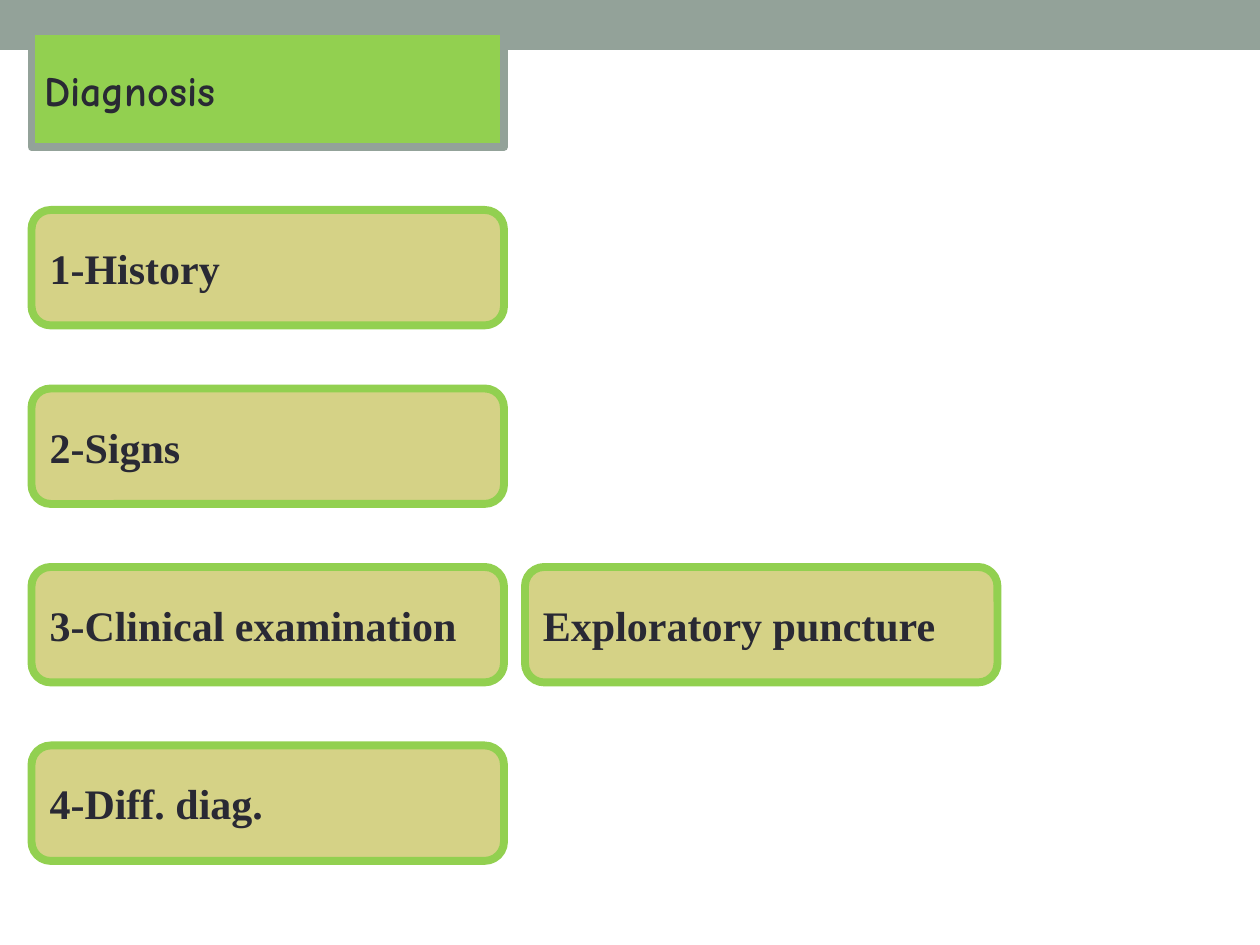
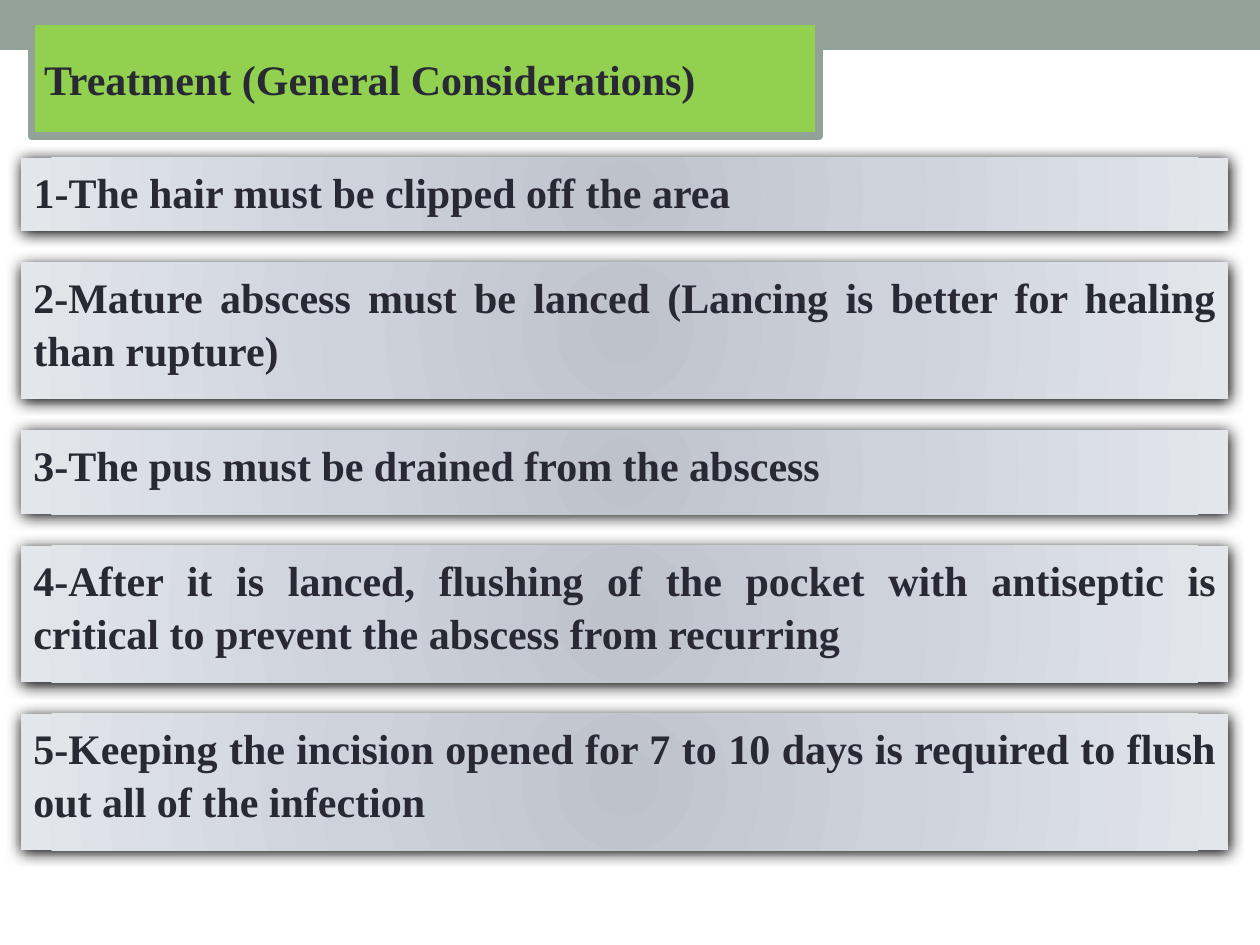
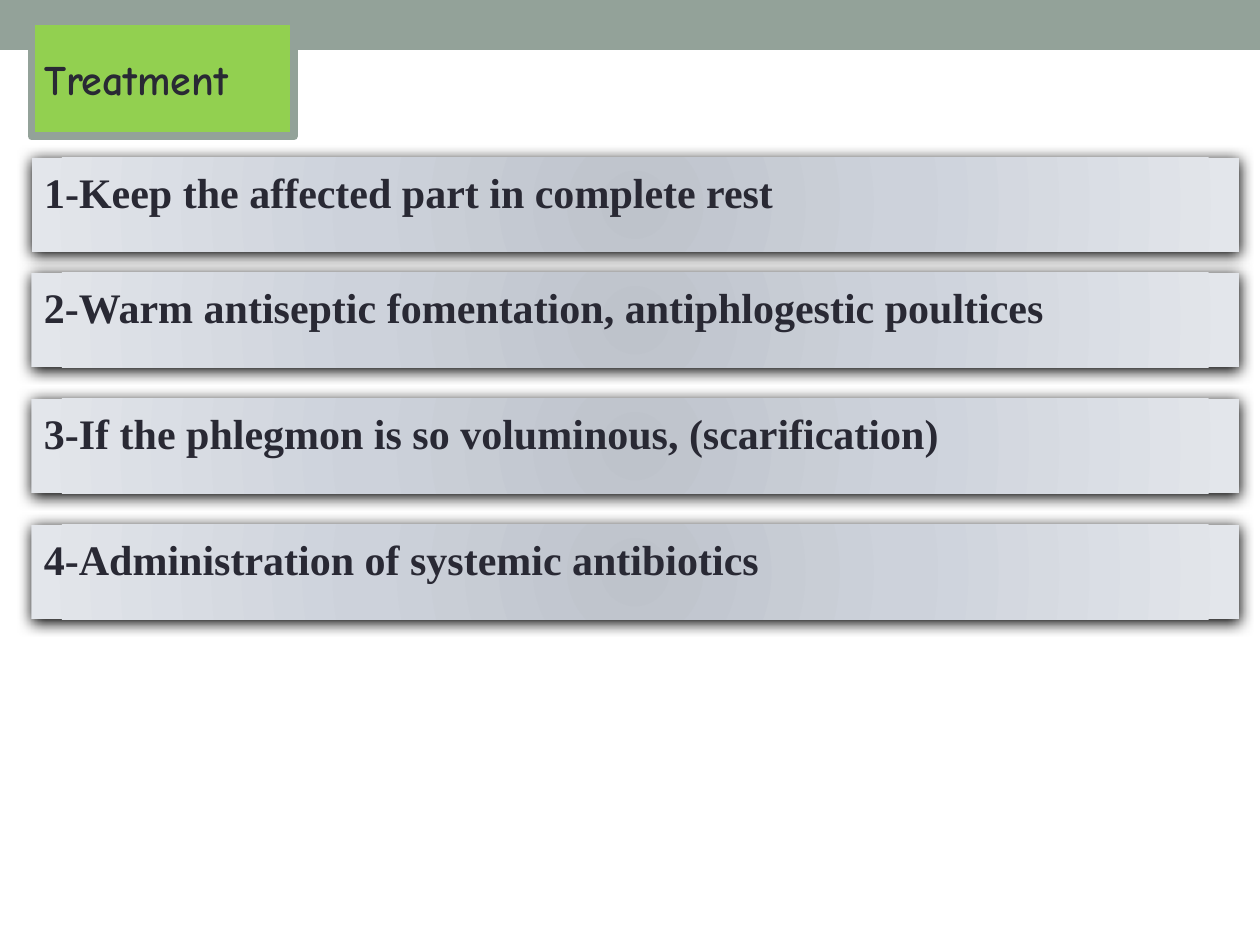
from lxml.etree import SubElement
from pptx import Presentation
from pptx.dml.color import RGBColor
from pptx.enum.shapes import MSO_SHAPE
from pptx.enum.text import MSO_ANCHOR, MSO_AUTO_SIZE, PP_ALIGN
from pptx.oxml import parse_xml
from pptx.oxml.ns import nsdecls, qn
from pptx.util import Emu, Pt

PX = 9525
SLIDE_WIDTH, SLIDE_HEIGHT, BAND_HEIGHT = 960, 720, 38
BOX_LEFT, BOX_WIDTH, BOX_HEIGHT = 24, 360, 88
BOX_PITCH = 136
PANEL_WIDTH = 920

SAGE = RGBColor(0x93, 0xA2, 0x99)
GREEN = RGBColor(0x92, 0xD0, 0x50)
KHAKI = RGBColor(0xD5, 0xD2, 0x86)
INK = RGBColor(0x29, 0x29, 0x34)
PANEL_STOPS = (
    (0, RGBColor(0xBE, 0xC3, 0xCB)),
    (45, RGBColor(0xCD, 0xD2, 0xDB)),
    (100, RGBColor(0xE3, 0xE6, 0xEB)),
)
SHADOW_COLOR = RGBColor(0, 0, 0)

SERIF, COMIC = "Times New Roman", "Comic Neue"
TITLE_LAYOUT, LIST_LAYOUT = 5, 1

STEPS = ["1-History", "2-Signs", "3-Clinical examination", "4-Diff. diag."]

# Each panel: text, top, height
CONSIDERATIONS = [
    ("1-The hair must be clipped off the area", 120, 56),
    ("2-Mature abscess must be lanced (Lancing is better for healing than rupture)", 200, 104),
    ("3-The pus must be drained from the abscess", 328, 64),
    ("4-After it is lanced, flushing of the pocket with antiseptic is critical "
     "to prevent the abscess from recurring", 416, 104),
    ("5-Keeping the incision opened for 7 to 10 days is required to flush "
     "out all of the infection", 544, 104),
]
TREATMENTS = [
    ("1-Keep the affected part in complete rest", 120, 72),
    ("2-Warm antiseptic fomentation, antiphlogestic poultices", 208, 72),
    ("3-If the phlegmon is so voluminous, (scarification)", 304, 72),
    ("4-Administration of systemic antibiotics", 400, 72),
]


def place(box, left, top, width, height):
    sides = {"left": left, "top": top, "width": width, "height": height}
    for side, length in sides.items():
        setattr(box, side, Emu(length * PX))


def add_box(page, kind, left, top, width, height):
    box = page.shapes.add_shape(kind, *(Emu(n * PX) for n in (left, top, width, height)))
    box.shadow.inherit = False
    return box


def write(box, text, font=SERIF, anchor=MSO_ANCHOR.MIDDLE, align=PP_ALIGN.LEFT, spacing=1.0):
    frame = box.text_frame
    frame.text = text
    frame_format = {"word_wrap": True, "auto_size": MSO_AUTO_SIZE.NONE, "vertical_anchor": anchor}
    for name, value in frame_format.items():
        setattr(frame, name, value)
    para = frame.paragraphs[0]
    para_format = {"alignment": align, "space_before": Pt(0), "line_spacing": spacing}
    for name, value in para_format.items():
        setattr(para, name, value)
    span = para.runs[0]
    for name, value in {"name": font, "size": Pt(24), "bold": True}.items():
        setattr(span.font, name, value)
    span.font.color.rgb = INK


def paint(box, fill, line):
    box.fill.solid()
    box.fill.fore_color.rgb = fill
    box.line.color.rgb = line
    box.line.width = Pt(4.5)


def add_band(deck, page):
    """Draw the top band and move it to the master, behind everything."""
    band = add_box(page, MSO_SHAPE.RECTANGLE, 0, 0, SLIDE_WIDTH, BAND_HEIGHT)
    band.fill.solid()
    band.fill.fore_color.rgb = SAGE
    band.line.fill.background()
    band.element.nvSpPr.cNvPr.set("id", "99")
    deck.slide_master.shapes.element.insert(2, band.element)


def set_title(page, text, top, width, font):
    """Turn the title placeholder into a rounded label."""
    title = page.shapes.title
    title.element.nvSpPr.nvPr.find(qn("p:ph")).set("idx", "0")
    place(title, BOX_LEFT, top, width, BOX_HEIGHT)
    outline = parse_xml(f'<a:prstGeom {nsdecls("a")} prst="roundRect"><a:avLst/></a:prstGeom>')
    title.element.spPr.insert(1, outline)
    paint(title, GREEN, SAGE)
    write(title, text, font)


def add_step(page, text, left, top):
    step = add_box(page, MSO_SHAPE.ROUNDED_RECTANGLE, left, top, BOX_WIDTH, BOX_HEIGHT)
    paint(step, KHAKI, GREEN)
    write(step, text)


def shade(panel):
    """Give a panel its radial gradient and soft shadow."""
    panel.fill.background()
    panel.shadow.inherit = False
    properties = panel.element.spPr
    stops = "".join(
        f'<a:gs pos="{position * 1000}"><a:srgbClr val="{color}"/></a:gs>'
        for position, color in PANEL_STOPS
    )
    gradient = parse_xml(
        f'<a:gradFill {nsdecls("a")} rotWithShape="1"><a:gsLst>{stops}</a:gsLst>'
        '<a:path path="circle"><a:fillToRect l="100000" t="100000" r="100000" b="100000"/>'
        "</a:path></a:gradFill>"
    )
    properties.replace(properties.find(qn("a:noFill")), gradient)
    shadow = SubElement(
        properties.find(qn("a:effectLst")), qn("a:outerShdw"),
        blurRad=str(Pt(8.5)), dist=str(Pt(1)), dir="5400000", rotWithShape="0",
    )
    SubElement(shadow, qn("a:srgbClr"), val=str(SHADOW_COLOR))
    panel.line.fill.background()


def remove_bullet(para):
    properties = para._p.get_or_add_pPr()
    properties.set("marL", "0")
    properties.set("indent", "0")
    SubElement(properties, qn("a:buNone"))


def add_panels(page, left, rows):
    """Put the first row in the body placeholder and the rest in rectangles."""
    for index, (text, top, height) in enumerate(rows):
        if index == 0:
            panel = page.placeholders[1]
            place(panel, left, top, PANEL_WIDTH, height)
        else:
            panel = add_box(page, MSO_SHAPE.RECTANGLE, left, top, PANEL_WIDTH, height)
        shade(panel)
        write(panel, text, anchor=MSO_ANCHOR.TOP, align=PP_ALIGN.JUSTIFY, spacing=1.05)
        remove_bullet(panel.text_frame.paragraphs[0])


def add_page(deck, layout):
    return deck.slides.add_slide(deck.slide_layouts[layout])


def main():
    deck = Presentation()
    deck.slide_width, deck.slide_height = Emu(SLIDE_WIDTH * PX), Emu(SLIDE_HEIGHT * PX)

    diagnosis = add_page(deck, TITLE_LAYOUT)
    add_band(deck, diagnosis)
    set_title(diagnosis, "Diagnosis", 24, BOX_WIDTH, COMIC)
    for row, step in enumerate(STEPS, start=1):
        add_step(diagnosis, step, BOX_LEFT, 24 + row * BOX_PITCH)
    add_step(diagnosis, "Exploratory puncture", 400, 24 + 3 * BOX_PITCH)

    considerations = add_page(deck, LIST_LAYOUT)
    set_title(considerations, "Treatment (General Considerations)", 16, 600, SERIF)
    add_panels(considerations, 16, CONSIDERATIONS)

    treatment = add_page(deck, LIST_LAYOUT)
    set_title(treatment, "Treatment", 16, 200, COMIC)
    add_panels(treatment, 24, TREATMENTS)

    deck.save("out.pptx")


if __name__ == "__main__":
    main()
